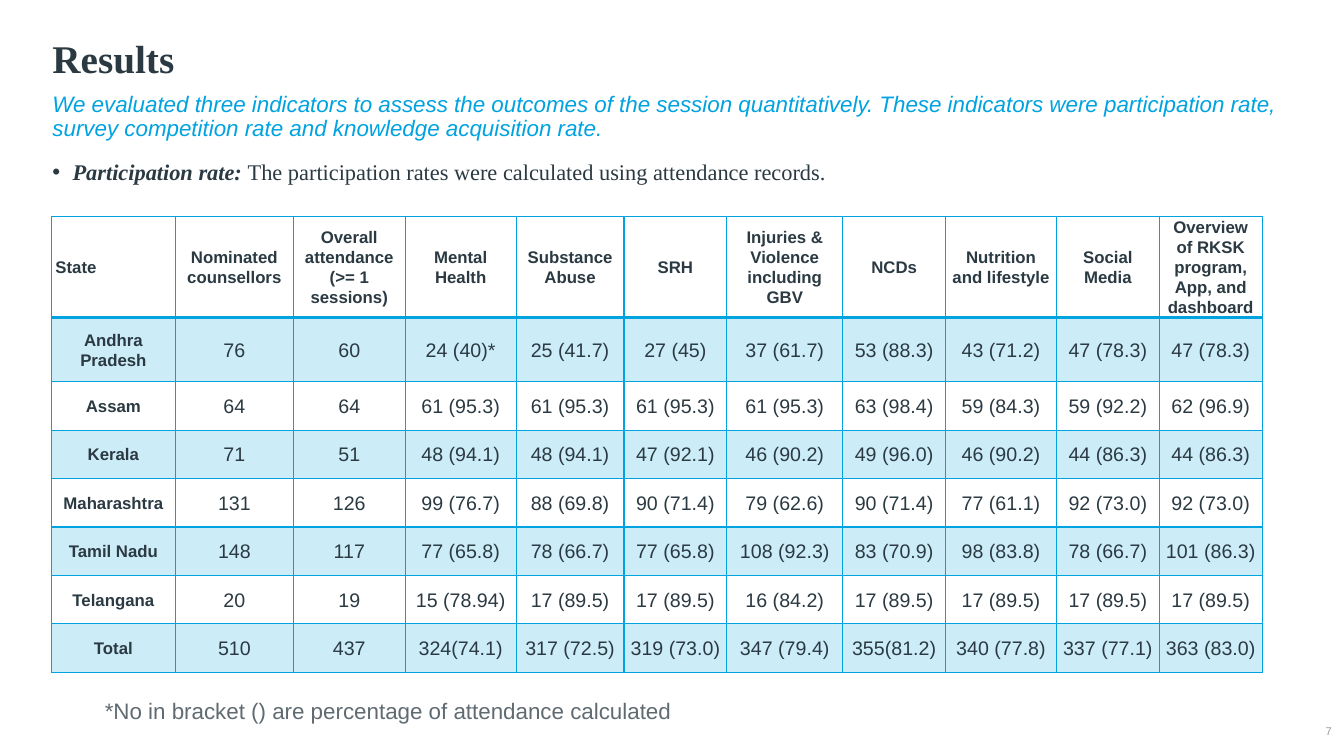
import lxml.etree
import pptx
import pptx.dml.color
import pptx.enum.text
import pptx.oxml.ns
import pptx.util

Inches = pptx.util.Inches
Pt = pptx.util.Pt
RGBColor = pptx.dml.color.RGBColor
Align = pptx.enum.text.PP_ALIGN
Anchor = pptx.enum.text.MSO_ANCHOR
qn = pptx.oxml.ns.qn

NAVY = RGBColor(0x2B, 0x3A, 0x42)
CYAN = RGBColor(0x00, 0xA3, 0xE0)
SLATE = RGBColor(0x60, 0x6B, 0x71)
GREY = RGBColor(0x95, 0x9C, 0xA0)
SANS = "Arial"
SERIF = "Times New Roman"

COLUMN_WIDTHS = [1.23, 1.17, 1.11, 1.1, 1.07, 1.02, 1.15, 1.02, 1.1, 1.02, 1.02]
ROW_HEIGHTS = [0.98, 0.64] + [0.48] * 6
ATTENDANCE = [
    ["State", "Nominated counsellors", "Overall attendance (>= 1 sessions)",
     "Mental Health", "Substance Abuse", "SRH", "Injuries & Violence including GBV",
     "NCDs", "Nutrition and lifestyle", "Social Media",
     "Overview of RKSK program, App, and dashboard"],
    ["Andhra Pradesh", "76", "60", "24 (40)*", "25 (41.7)", "27 (45)", "37 (61.7)",
     "53 (88.3)", "43 (71.2)", "47 (78.3)", "47 (78.3)"],
    ["Assam", "64", "64", "61 (95.3)", "61 (95.3)", "61 (95.3)", "61 (95.3)",
     "63 (98.4)", "59 (84.3)", "59 (92.2)", "62 (96.9)"],
    ["Kerala", "71", "51", "48 (94.1)", "48 (94.1)", "47 (92.1)", "46 (90.2)",
     "49 (96.0)", "46 (90.2)", "44 (86.3)", "44 (86.3)"],
    ["Maharashtra", "131", "126", "99 (76.7)", "88 (69.8)", "90 (71.4)", "79 (62.6)",
     "90 (71.4)", "77 (61.1)", "92 (73.0)", "92 (73.0)"],
    ["Tamil Nadu", "148", "117", "77 (65.8)", "78 (66.7)", "77 (65.8)", "108 (92.3)",
     "83 (70.9)", "98 (83.8)", "78 (66.7)", "101 (86.3)"],
    ["Telangana", "20", "19", "15 (78.94)", "17 (89.5)", "17 (89.5)", "16 (84.2)",
     "17 (89.5)", "17 (89.5)", "17 (89.5)", "17 (89.5)"],
    ["Total", "510", "437", "324(74.1)", "317 (72.5)", "319 (73.0)", "347 (79.4)",
     "355(81.2)", "340 (77.8)", "337 (77.1)", "363 (83.0)"],
]


class ResultsSlide:
    """Holds the current slide and its style, with a method per kind of element."""

    def __init__(self, presentation):
        self.slide = presentation.slides.add_slide(presentation.slide_layouts[3])
        self.frame_format = {"word_wrap": True,
                             "auto_size": pptx.enum.text.MSO_AUTO_SIZE.NONE}
        self.cell_format = {"margin_left": Inches(0.04), "margin_right": Inches(0.04),
                            "margin_top": 0, "margin_bottom": 0,
                            "vertical_anchor": Anchor.MIDDLE}

    def apply(self, target, values):
        for name, value in values.items():
            setattr(target, name, value)

    def add_text(self, paragraph, text, color, **font):
        run = paragraph.add_run()
        run.text = text
        run.font.color.rgb = color
        self.apply(run.font, font)

    def prepare(self, shape, box, frame=None, **layout):
        sides = zip(("left", "top", "width", "height"), map(Inches, box))
        self.apply(shape, dict(sides))
        self.apply(shape.text_frame, {**self.frame_format, **(frame or {})})
        paragraph = shape.text_frame.paragraphs[0]
        self.apply(paragraph, layout)
        return paragraph

    def placeholder(self, index, box, frame=None, **layout):
        return self.prepare(self.slide.placeholders[index], box, frame, **layout)

    def text_box(self, box, frame=None, **layout):
        shape = self.slide.shapes.add_textbox(*map(Inches, box))
        return self.prepare(shape, box, frame, **layout)

    def bullet(self, paragraph, indent=0, character=None):
        properties = paragraph._p.get_or_add_pPr()
        properties.set("marL", str(Inches(indent)))
        properties.set("indent", str(-Inches(indent)))
        if character:
            lxml.etree.SubElement(properties, qn("a:buChar"), char=character)
        else:
            lxml.etree.SubElement(properties, qn("a:buNone"))

    def borders(self, cell, widths):
        properties = cell._tc.get_or_add_tcPr()
        for position, (side, width) in enumerate(widths.items()):
            line = lxml.etree.Element(qn("a:ln" + side), w=str(Pt(width)))
            fill = lxml.etree.SubElement(line, qn("a:solidFill"))
            lxml.etree.SubElement(fill, qn("a:srgbClr"), val=str(CYAN))
            properties.insert(position, line)

    def shade(self, cell):
        cell.fill.solid()
        cell.fill.fore_color.rgb = CYAN
        color = cell._tc.tcPr.find(".//" + qn("a:srgbClr"))
        lxml.etree.SubElement(color, qn("a:alpha"), val="20000")

    def table(self, left, top, rows, widths, heights):
        box = map(Inches, (left, top, sum(widths), sum(heights)))
        table = self.slide.shapes.add_table(len(rows), len(widths), *box).table
        self.apply(table, {"first_row": False, "horz_banding": False})
        for column, width in zip(table.columns, widths):
            column.width = Inches(width)
        for row, height in zip(table.rows, heights):
            row.height = Inches(height)
        for row_index, row in enumerate(rows):
            for column_index, text in enumerate(row):
                cell = table.cell(row_index, column_index)
                self.apply(cell, self.cell_format)
                if row_index % 2:
                    self.shade(cell)
                else:
                    cell.fill.background()
                self.borders(cell, {"L": 1, "R": 1,
                                    "T": 2 if row_index == 1 else 1,
                                    "B": 2 if row_index == 0 else 1})
                heading = row_index == 0 or column_index == 0
                corner = row_index == column_index == 0
                paragraph = cell.text_frame.paragraphs[0]
                self.apply(paragraph, {"alignment": Align.LEFT if corner else Align.CENTER,
                                       "line_spacing": 1.07})
                self.add_text(paragraph, text, NAVY, name=SANS, bold=heading,
                              size=Pt(12 if heading else 14))


def main():
    presentation = pptx.Presentation()
    presentation.slide_width = Inches(13.33)
    presentation.slide_height = Inches(7.5)
    results = ResultsSlide(presentation)

    title = results.placeholder(0, (0.42, 0.32, 12.4, 0.54),
                                {"vertical_anchor": Anchor.BOTTOM},
                                alignment=Align.LEFT, line_spacing=0.9)
    results.add_text(title, "Results", NAVY, name=SERIF, size=Pt(28), bold=True)

    summary = results.placeholder(1, (0.42, 0.87, 12.4, 0.84),
                                  line_spacing=0.9, space_before=Pt(0))
    results.bullet(summary)
    results.add_text(summary, "We evaluated three indicators to assess the outcomes of the "
                     "session quantitatively. These indicators were participation rate, "
                     "survey competition rate and knowledge acquisition rate.",
                     CYAN, name=SANS, size=Pt(16), italic=True)

    rate = results.placeholder(2, (0.42, 1.52, 12.17, 5.35), space_before=Pt(10))
    results.bullet(rate, 0.2, "•")
    results.add_text(rate, "Participation rate: ", NAVY, name=SERIF, size=Pt(16),
                     bold=True, italic=True)
    results.add_text(rate, "The participation rates were calculated using attendance records.",
                     NAVY, name=SERIF, size=Pt(16))

    results.table(0.51, 2.15, ATTENDANCE, COLUMN_WIDTHS, ROW_HEIGHTS)

    note = results.text_box((0.88, 6.87, 6.97, 0.37))
    results.add_text(note, " *No in bracket () are percentage of attendance calculated",
                     SLATE, name=SANS, size=Pt(16))

    margins = dict.fromkeys(("margin_left", "margin_top", "margin_right", "margin_bottom"), 0)
    number = results.text_box((12.82, 7.16, 0.39, 0.19),
                              {**margins, "vertical_anchor": Anchor.MIDDLE},
                              alignment=Align.RIGHT)
    results.add_text(number, "7", GREY, name=SANS, size=Pt(8))

    presentation.save("out.pptx")


if __name__ == "__main__":
    main()
